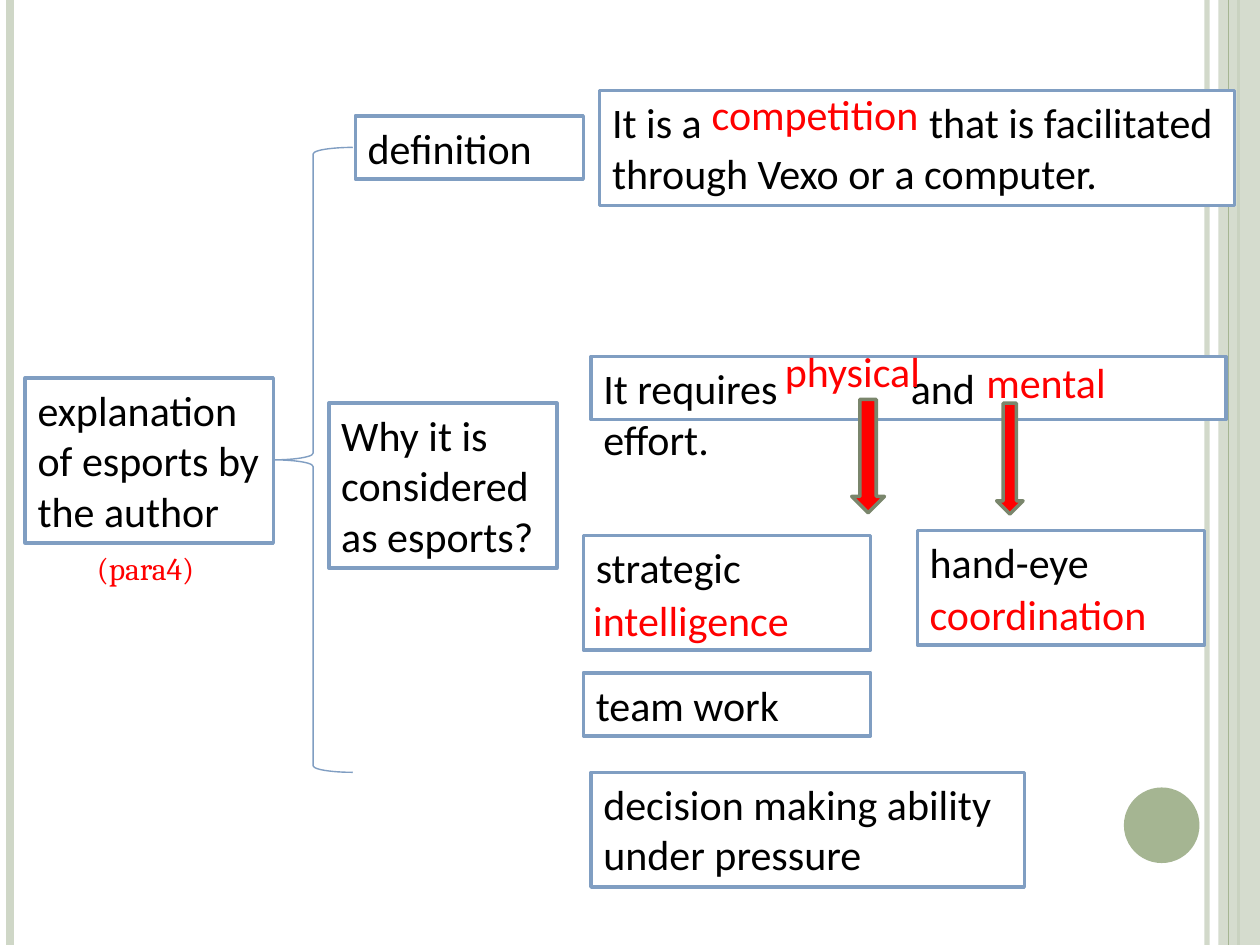
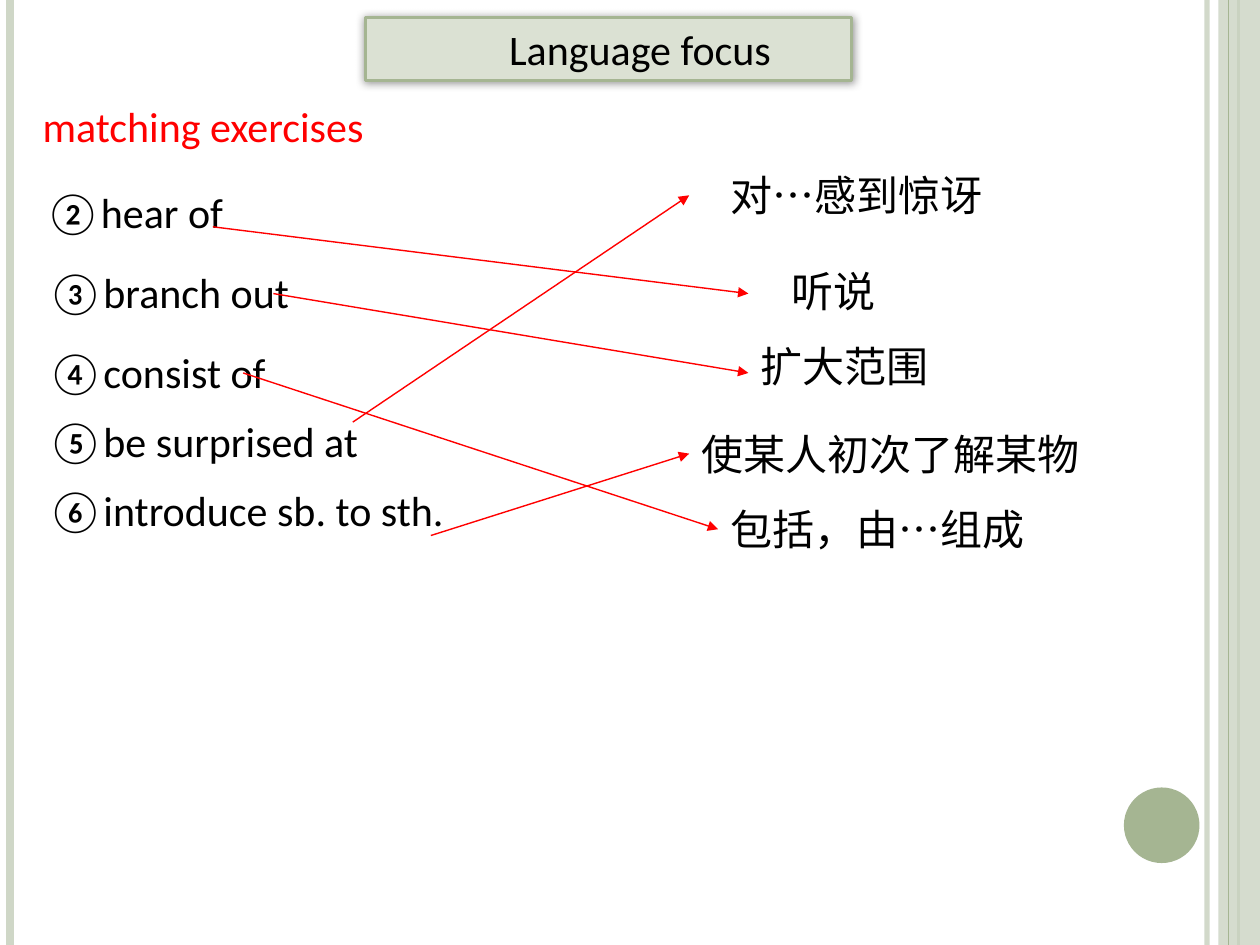
"""Build two esports lesson slides: an explanation map and a matching exercise."""
from lxml import etree
from pptx import Presentation
from pptx.dml.color import RGBColor
from pptx.enum import shapes, text
from pptx.oxml import ns
from pptx.util import Inches, Pt

BLACK = RGBColor(0x00, 0x00, 0x00)
WHITE = RGBColor(0xFF, 0xFF, 0xFF)
RED = RGBColor(0xFF, 0x00, 0x00)
BLUE = RGBColor(0x80, 0x9E, 0xC2)
GREEN = RGBColor(0xA5, 0xB5, 0x92)
PALE_GREEN = RGBColor(0xCF, 0xD7, 0xC7)
TITLE_FILL = RGBColor(0xDB, 0xE1, 0xD3)
ARROW_EDGE = RGBColor(0x7A, 0x86, 0x6C)
SHAPE = shapes.MSO_SHAPE


def add_item(s, at, runs="", kind=None, fill=None, line=None, width=2, color=BLACK, size=24, font="Calibri"):
    at = [Inches(v) for v in at]
    if kind is None:
        sp = s.shapes.add_textbox(*at)
    else:
        sp = s.shapes.add_shape(kind, *at)
        sp.shadow.inherit = False
    for part, c in ((sp.fill, fill), (sp.line.fill, line)):
        if c is None:
            part.background()
        else:
            part.solid()
            part.fore_color.rgb = c
    if line is not None:
        sp.line.width = Pt(width)
    if runs:
        tf = sp.text_frame
        tf.word_wrap = True
        tf.vertical_anchor = text.MSO_ANCHOR.TOP
        p = tf.paragraphs[0]
        p.alignment = text.PP_ALIGN.LEFT
        for words in [runs] if isinstance(runs, str) else runs:
            r = p.add_run()
            r.text = words
            r.font.color.rgb = color
            for key, value in {"size": Pt(size), "name": font, "underline": words == "\t"}.items():
                setattr(r.font, key, value)
    return sp


def add_line(s, start, end, color, width):
    ln = s.shapes.add_connector(shapes.MSO_CONNECTOR.STRAIGHT, *[Inches(v) for v in start + end])
    ln.line.color.rgb = color
    ln.line.width = Pt(width)
    etree.SubElement(ln.element.spPr, ns.qn("a:effectLst"))
    return ln


prs = Presentation()
prs.slide_width, prs.slide_height = Inches(10), Inches(7.5)
layout = prs.slide_layouts[6]
for ph in list(layout.placeholders):
    layout.shapes.element.remove(ph.element)

s = prs.slides.add_slide(layout)
rules = [add_line(s, (x, 0), (x, 7.5), color, width) for x, color, width in (
    (9.58, PALE_GREEN, 3), (0.08, PALE_GREEN, 4.5), (9.83, GREEN, 1.5), (9.75, GREEN, 0.75))]
band = add_item(s, (9.67, 0, 0.33, 7.5), kind=SHAPE.RECTANGLE, fill=PALE_GREEN)
dot = add_item(s, (8.92, 6.25, 0.6, 0.6), kind=SHAPE.OVAL, fill=GREEN)
for sp, alpha in ((rules[0], 93), (band, 87)):
    clr = next(sp.element.iter(ns.qn("a:srgbClr")))
    etree.SubElement(clr, ns.qn("a:alpha"), val=str(alpha * 1000))
for sp in rules[:3] + [band, rules[3], dot]:
    layout.shapes.element.append(sp.element)

add_item(s, (2.17, 1.17, 0.63, 4.96), kind=SHAPE.LEFT_BRACE, line=BLUE, width=0.79)
boxes = (
    ((0.2, 3, 1.97, 1.31), "explanation of esports by the author", ()),
    ((2.82, 0.92, 1.81, 0.5), "definition", ()),
    ((4.76, 0.72, 5.04, 0.91),
     ("It is a ", "\t", " that is facilitated through Vexo or a computer."), (2.44,)),
    ((2.61, 3.2, 1.81, 1.31), "Why it is considered as esports?", ()),
    ((4.69, 2.83, 5.04, 0.5), ("It requires", "\t", "and ", "\t", " effort."), (2.44, 4)),
    ((4.63, 4.25, 2.28, 0.91), "strategic", ()),
    ((7.28, 4.21, 2.28, 0.91), "hand-eye", ()),
    ((4.63, 5.34, 2.28, 0.5), "team work", ()),
    ((4.69, 6.13, 3.44, 0.91), "decision making ability under pressure", ()),
)
for at, runs, stops in boxes:
    sp = add_item(s, at, runs, SHAPE.RECTANGLE, WHITE, BLUE)
    if stops:
        pPr = sp.text_frame.paragraphs[0].alignment is not None and next(sp.element.iter(ns.qn("a:pPr")))
        tabs = etree.SubElement(pPr, ns.qn("a:tabLst"))
        for stop in stops:
            etree.SubElement(tabs, ns.qn("a:tab"), pos=str(Inches(stop)), algn="l")

add_item(s, (0.67, 4.31, 1.97, 0.4), "(para4)", color=RED, size=18, font="Cambria")
for x, y, w, answer in (
    (5.55, 0.65, 1.86, "competition"),
    (6.13, 2.69, 1.29, "physical"),
    (7.73, 2.78, 1.16, "mental"),
    (4.61, 4.67, 1.77, "intelligence"),
    (7.28, 4.62, 1.94, "coordination"),
):
    add_item(s, (x, y, w, 0.5), answer, color=RED)
for at in ((6.76, 3.17, 0.26, 0.9), (7.91, 3.2, 0.21, 0.88)):
    add_item(s, at, kind=SHAPE.DOWN_ARROW, fill=RED, line=ARROW_EDGE)

s = prs.slides.add_slide(layout)
title = add_item(s, (2.9, 0.14, 3.86, 0.5), "Language focus", SHAPE.RECTANGLE, TITLE_FILL, GREEN)
p = title.text_frame.paragraphs[0]
p.alignment = text.PP_ALIGN.CENTER
p.level = 1
pPr = next(title.element.iter(ns.qn("a:pPr")))
pPr.set("marL", str(Inches(0.5)))
pPr.set("indent", "0")
effects = next(title.element.iter(ns.qn("a:effectLst")))
glow = etree.SubElement(effects, ns.qn("a:outerShdw"), blurRad=str(Pt(5)), dist="0", dir="0")
clr = etree.SubElement(glow, ns.qn("a:srgbClr"), val=str(BLACK))
etree.SubElement(clr, ns.qn("a:alpha"), val="40000")

add_item(s, (0.24, 0.75, 9.14, 0.5), "matching exercises", color=RED)
for x, y, phrase in (
    (0.26, 1.43, "②hear of"),
    (0.28, 2.07, "③branch out"),
    (0.28, 2.7, "④consist of"),
    (0.28, 3.25, "⑤be surprised at"),
    (0.28, 3.8, "⑥introduce sb. to sth."),
):
    add_item(s, (x, y, 9.14, 0.5), phrase)

meanings = [add_item(s, (x, y, w, 0.5), words) for x, y, w, words in (
    (5.7, 1.3, 3.7, "对…感到惊讶"),
    (6.18, 2.06, 1.65, "听说"),
    (5.94, 2.65, 1.89, "扩大范围"),
    (5.47, 3.35, 3.39, "使某人初次了解某物"),
    (5.7, 3.95, 9.14, "包括，由…组成"),
)]
for start, end, target in (
    ((1.69, 1.8), (5.94, 2.33), None),
    ((2.17, 2.33), (5.94, 2.96), None),
    ((1.93, 2.96), (5.7, 4.2), meanings[4]),
    ((2.8, 3.35), (5.47, 1.55), None),
    ((3.42, 4.25), (5.47, 3.6), meanings[3]),
):
    ln = add_line(s, start, end, RED, 0.79)
    if target is not None:
        ln.end_connect(target, 1)
    etree.SubElement(ln.line.fill and next(ln.element.iter(ns.qn("a:ln"))), ns.qn("a:tailEnd"), type="triangle")

prs.save("out.pptx")
